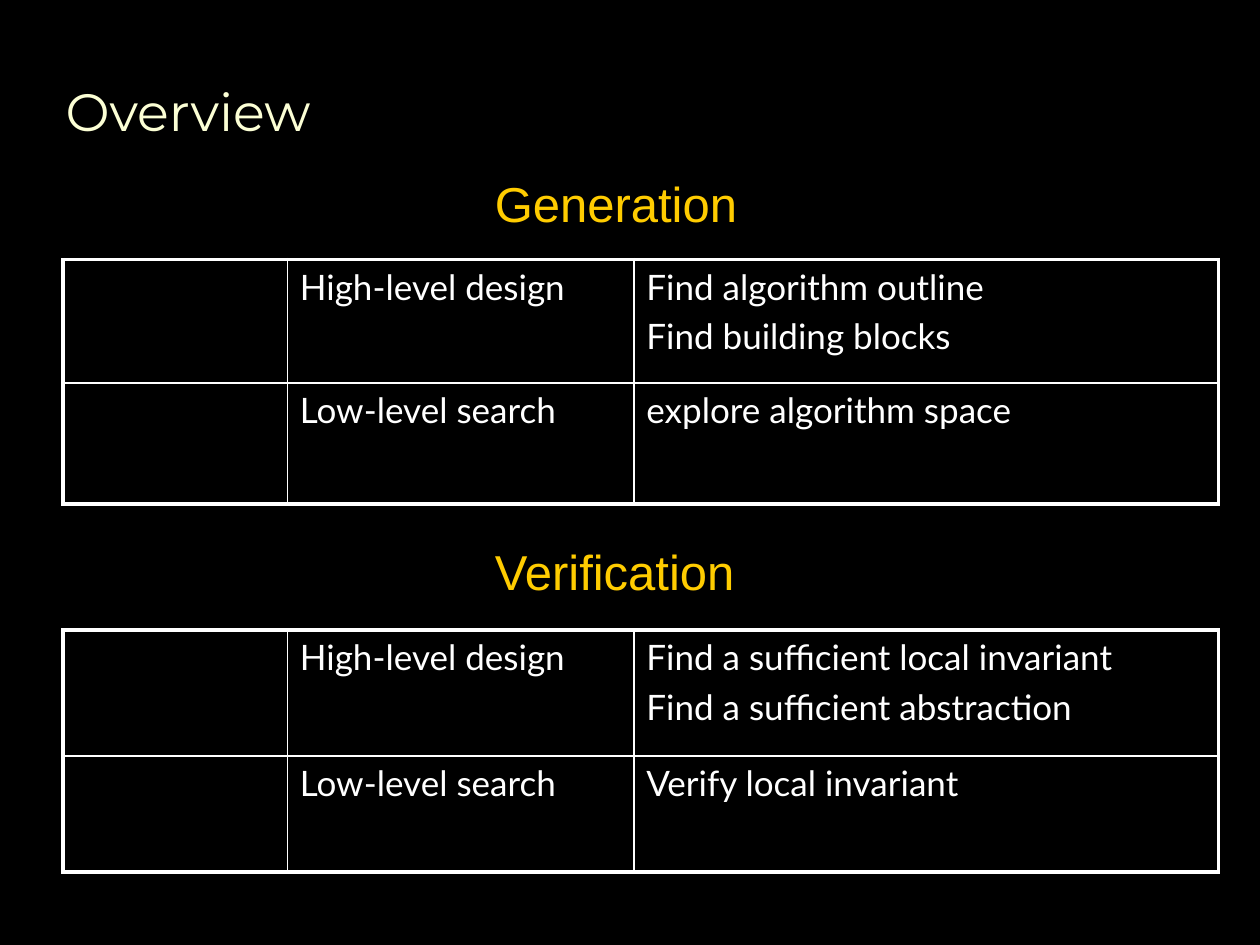
from dataclasses import dataclass

from pptx import Presentation
from pptx.dml.color import RGBColor
from pptx.enum.text import MSO_ANCHOR, MSO_AUTO_SIZE, PP_ALIGN
from pptx.oxml.ns import qn
from pptx.util import Inches, Pt
from lxml.etree import SubElement


@dataclass(frozen=True)
class Theme:
    background: str = "000000"
    title: str = "FCFFD5"
    heading: str = "FFCC00"
    body: str = "FFFFFF"
    title_font: str = "Montserrat"
    heading_font: str = "Arial"
    body_font: str = "Lato"
    title_size: int = 30
    heading_size: int = 28
    body_size: int = 20
    outer_line: float = 2.25
    inner_line: float = 1


THEME = Theme()
TABLE_LEFT = 0.5
HEADING_LEFT = 3.83
HEADING_HEIGHT = 0.57
COLUMNS = (1.78, 2.75, 4.64)
STAGES = ("High-level design", "Low-level search")

SECTIONS = (
    ("Generation", 1.33, 4.67, 2.06, (0.98, 0.96),
     (("Find algorithm outline", "Find building blocks"),
      ("explore algorithm space",))),
    ("Verification", 4.25, 2.25, 5, (1, 0.92),
     (("Find a sufficient local invariant", "Find a sufficient abstraction"),
      ("Verify local invariant",))),
)


def add_run(paragraph, text, font, size, color):
    run = paragraph.add_run()
    run.text = text
    run.font.name = font
    run.font.size = Pt(size)
    run.font.color.rgb = RGBColor.from_string(color)


def set_space_before(paragraph, percent):
    spacing = SubElement(paragraph._p.get_or_add_pPr(), qn("a:spcBef"))
    SubElement(spacing, qn("a:spcPct"), val=str(percent * 1000))


def format_title(slide, text):
    title = slide.shapes.title
    title.left, title.top = Inches(0.42), Inches(0.25)
    title.width, title.height = Inches(8.58), Inches(1.25)
    frame = title.text_frame
    frame.vertical_anchor = MSO_ANCHOR.MIDDLE
    paragraph = frame.paragraphs[0]
    paragraph.alignment = PP_ALIGN.LEFT
    add_run(paragraph, text, THEME.title_font, THEME.title_size, THEME.title)


def add_heading(slide, text, top, width):
    heading = slide.shapes.add_textbox(
        Inches(HEADING_LEFT), Inches(top), Inches(width), Inches(HEADING_HEIGHT))
    frame = heading.text_frame
    frame.word_wrap = True
    frame.auto_size = MSO_AUTO_SIZE.SHAPE_TO_FIT_TEXT
    paragraph = frame.paragraphs[0]
    set_space_before(paragraph, 50)
    add_run(paragraph, text, THEME.heading_font, THEME.heading_size, THEME.heading)


def set_borders(cell, outer_sides):
    properties = cell._tc.get_or_add_tcPr()
    for side, is_outer in outer_sides.items():
        width = THEME.outer_line if is_outer else THEME.inner_line
        line = SubElement(properties, qn(f"a:ln{side}"), w=str(Pt(width)))
        fill = SubElement(line, qn("a:solidFill"))
        SubElement(fill, qn("a:srgbClr"), val=THEME.body)


def fill_cell(cell, lines):
    cell.fill.solid()
    cell.fill.fore_color.rgb = RGBColor.from_string(THEME.background)
    frame = cell.text_frame
    for index, text in enumerate(lines):
        paragraph = frame.add_paragraph() if index else frame.paragraphs[0]
        set_space_before(paragraph, 20)
        add_run(paragraph, text, THEME.body_font, THEME.body_size, THEME.body)


def add_stage_table(slide, top, row_heights, tasks):
    table = slide.shapes.add_table(
        len(row_heights), len(COLUMNS), Inches(TABLE_LEFT), Inches(top),
        Inches(sum(COLUMNS)), Inches(sum(row_heights))).table
    table.first_row = table.horz_banding = False
    for column, width in zip(table.columns, COLUMNS):
        column.width = Inches(width)
    for r, height in enumerate(row_heights):
        table.rows[r].height = Inches(height)
        for c, lines in enumerate(((), (STAGES[r],), tasks[r])):
            cell = table.cell(r, c)
            set_borders(cell, {
                "L": c == 0,
                "R": c == len(COLUMNS) - 1,
                "T": r == 0,
                "B": r == len(row_heights) - 1,
            })
            fill_cell(cell, lines)


def main():
    deck = Presentation()
    deck.slide_width, deck.slide_height = Inches(10), Inches(7.5)
    slide = deck.slides.add_slide(deck.slide_layouts[5])
    slide.background.fill.solid()
    slide.background.fill.fore_color.rgb = RGBColor.from_string(THEME.background)
    format_title(slide, "Overview")
    for heading, heading_top, width, table_top, row_heights, tasks in SECTIONS:
        add_heading(slide, heading, heading_top, width)
        add_stage_table(slide, table_top, row_heights, tasks)
    deck.save("out.pptx")


if __name__ == "__main__":
    main()
